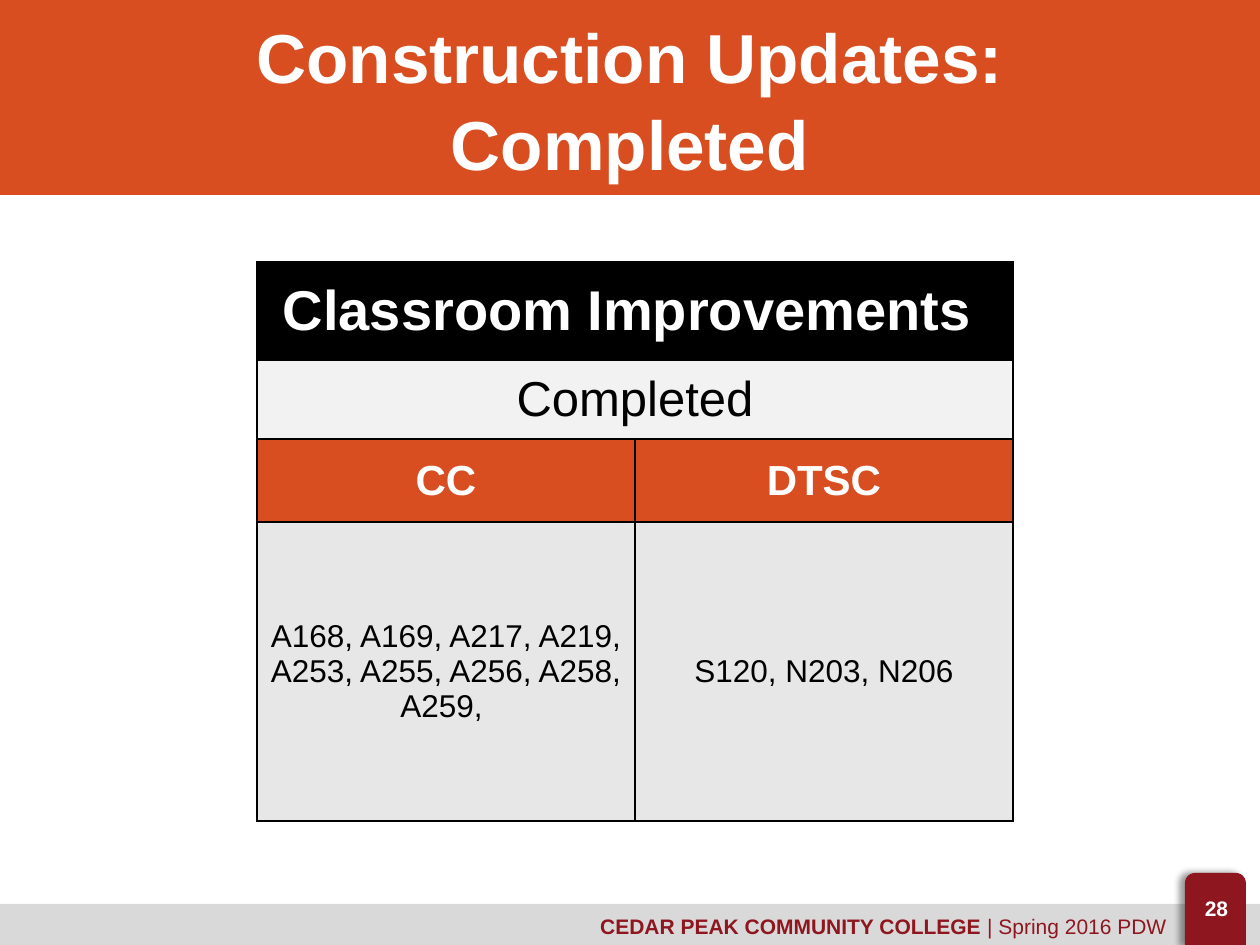
"""Build the slide of completed classroom improvements."""
from lxml import etree
from pptx import Presentation, util as u
from pptx.dml.color import RGBColor
from pptx.enum import shapes, text
from pptx.oxml import parse_xml
from pptx.oxml.ns import nsdecls

COLORS = {"orange": "D94E20", "white": "FFFFFF", "black": "000000", "band": "D9D9D9",
          "maroon": "8E161F", "pale": "F2F2F2", "gray": "E7E7E7"}
PX = u.Inches(1) // 126
TITLE = "Construction Updates: Completed"
FOOTER = [("CEDAR PEAK COMMUNITY COLLEGE ", True), ("| Spring 2016 PDW", False)]
PAGE_NUMBER = "28"
TABLE_LEFT, TABLE_TOP, COLUMN_WIDTH = 257, 262, 378
ROWS = [
    (98, "black", ["Classroom Improvements "], dict(size=32, color="white", bold=True)),
    (79, "pale", ["Completed"], dict(size=28)),
    (83, "orange", ["CC", "DTSC"], dict(size=24, color="white", bold=True)),
    (299, "gray", ["A168, A169, A217, A219, A253, A255, A256, A258, A259, ",
                   "S120, N203, N206"], dict(size=18)),
]
SHAPE = shapes.MSO_SHAPE


def paint(target, color):
    target.fill.solid()
    target.fill.fore_color.rgb = RGBColor.from_string(COLORS[color])


def write(frame, content, size, color="black", bold=False, align="CENTER", spacing=None):
    spans = [(content, bold)] if isinstance(content, str) else content
    para = frame.paragraphs[0]
    para.alignment = getattr(text.PP_ALIGN, align)
    if spacing:
        para.line_spacing = spacing
    for words, heavy in spans:
        span = para.add_run()
        span.text = words
        span.font.name, span.font.size, span.font.bold = "Arial", u.Pt(size), heavy
        span.font.color.rgb = RGBColor.from_string(COLORS[color])


def add_block(page, kind, area, color):
    block = page.shapes.add_shape(kind, *(n * PX for n in area))
    block.shadow.inherit = False
    paint(block, color)
    block.line.fill.background()
    return block


def add_label(page, area, content, anchor="TOP", **style):
    box = page.shapes.add_textbox(*(n * PX for n in area))
    box.text_frame.word_wrap = True
    box.text_frame.vertical_anchor = getattr(text.MSO_ANCHOR, anchor)
    write(box.text_frame, content, **style)


def add_shadow(block):
    effects = block._element.spPr.find("{*}effectLst")
    effects.append(parse_xml(
        f'<a:outerShdw {nsdecls("a")} blurRad="{u.Pt(4)}" dist="{u.Pt(3)}" dir="10800000">'
        f'<a:srgbClr val="{COLORS["black"]}"><a:alpha val="40000"/></a:srgbClr></a:outerShdw>'))


def add_borders(cell):
    props = cell._tc.get_or_add_tcPr()
    for index, side in enumerate(("lnL", "lnR", "lnT", "lnB")):
        props.insert(index, parse_xml(
            f'<a:{side} {nsdecls("a")} w="{u.Pt(1)}"><a:solidFill>'
            f'<a:srgbClr val="{COLORS["black"]}"/></a:solidFill></a:{side}>'))


def add_rooms(page):
    height = sum(row[0] for row in ROWS)
    area = (TABLE_LEFT, TABLE_TOP, 2 * COLUMN_WIDTH, height)
    table = page.shapes.add_table(len(ROWS), 2, *(n * PX for n in area)).table
    for column in table.columns:
        column.width = COLUMN_WIDTH * PX
    for index, (height, color, words, style) in enumerate(ROWS):
        table.rows[index].height = height * PX
        cells = [table.cell(index, column) for column in range(2)]
        for cell in cells:
            paint(cell, color)
            add_borders(cell)
            cell.vertical_anchor = text.MSO_ANCHOR.MIDDLE
        if len(words) == 1:
            cells[0].merge(cells[1])
        for cell, content in zip(cells, words):
            write(cell.text_frame, content, **style)


def main():
    deck = Presentation()
    deck.slide_width, deck.slide_height = 1260 * PX, 945 * PX
    page = deck.slides.add_slide(deck.slide_layouts[6])
    add_block(page, SHAPE.RECTANGLE, (0, 0, 1260, 195), "orange")
    add_label(page, (63, 0, 1134, 195), TITLE, anchor="MIDDLE", size=39.6,
              color="white", bold=True, spacing=1.04)
    add_block(page, SHAPE.RECTANGLE, (0, 904, 1260, 42), "band")
    tab = add_block(page, SHAPE.ROUND_2_SAME_RECTANGLE, (1185, 873, 61, 74), "maroon")
    add_shadow(tab)
    add_label(page, (411, 907, 768, 38), FOOTER, size=12, color="maroon", align="RIGHT")
    add_rooms(page)
    add_label(page, (1187, 889, 59, 38), PAGE_NUMBER, size=12, color="white", bold=True)
    deck.save("out.pptx")


if __name__ == "__main__":
    main()
